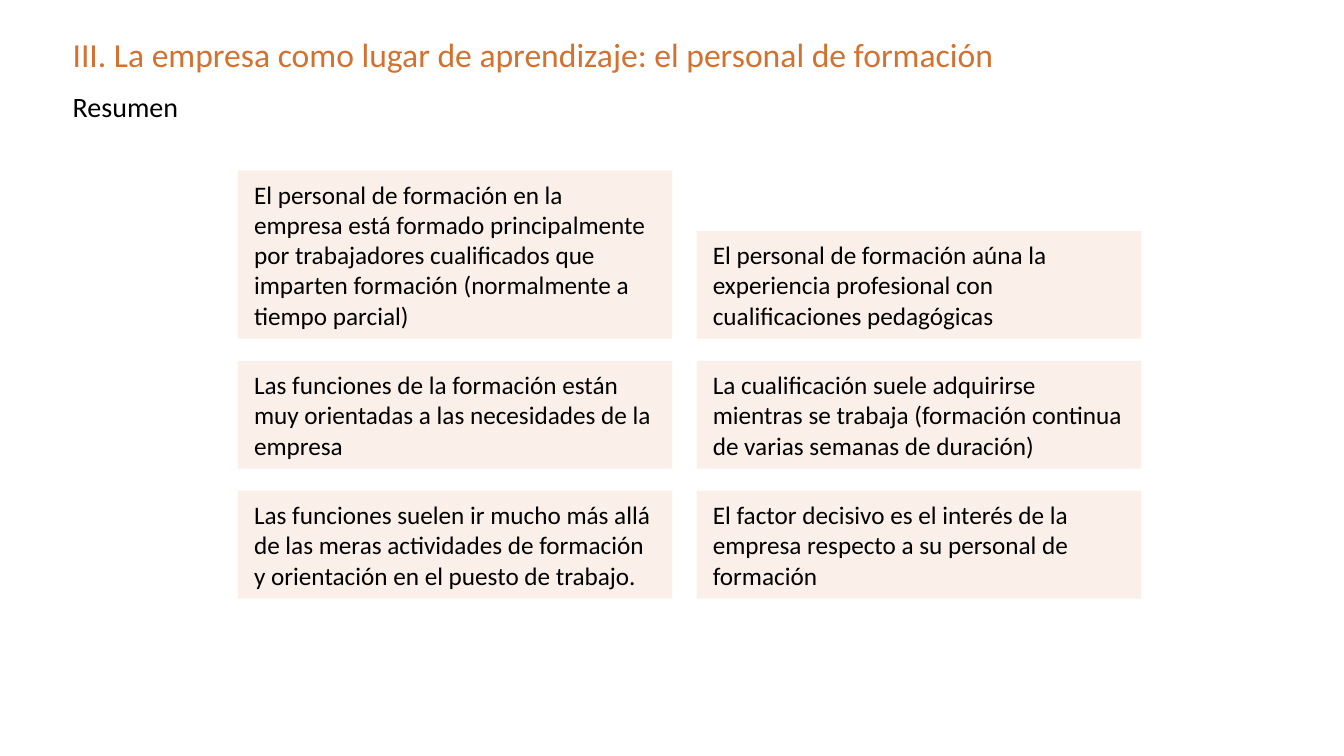
from lxml.etree import SubElement
from pptx import Presentation
from pptx.dml.color import RGBColor
from pptx.enum.shapes import MSO_SHAPE as Shape
from pptx.enum.text import MSO_ANCHOR as Anchor, MSO_AUTO_SIZE as AutoSize, PP_ALIGN as Align
from pptx.oxml.ns import qn
from pptx.util import Inches, Pt


def rgb(value):
    return RGBColor.from_string(value)


class SummarySlide:
    font = "Calibri"
    accent = "D37230"
    ink = "000000"

    def __init__(self, prs):
        self.s = prs.slides.add_slide(prs.slide_layouts[5])

    def set_text(self, sp, text, size, color, anchor, margins=(0, 0), spacing=None):
        tf = sp.text_frame
        tf.word_wrap = True
        tf.auto_size = AutoSize.NONE
        tf.vertical_anchor = anchor
        tf.margin_left = tf.margin_right = Inches(margins[0])
        tf.margin_top = tf.margin_bottom = Inches(margins[1])
        p = tf.paragraphs[0]
        p.alignment = Align.LEFT
        if spacing:
            p.line_spacing = spacing
        r = p.add_run()
        r.text = text
        r.font.name = self.font
        r.font.size = Pt(size)
        r.font.color.rgb = rgb(color)

    def title(self, text, left, top, width, height):
        sp = self.s.shapes.title
        sp.left, sp.top = Inches(left), Inches(top)
        sp.width, sp.height = Inches(width), Inches(height)
        self.set_text(sp, text, 24, self.accent, Anchor.MIDDLE, spacing=0.9)

    def subtitle(self, text, left, top, width, height):
        sp = self.s.shapes.add_textbox(*map(Inches, (left, top, width, height)))
        self.set_text(sp, text, 20, self.ink, Anchor.TOP)

    def card(self, text, left, top, width, height):
        sp = self.s.shapes.add_shape(
            Shape.RECTANGLE, *map(Inches, (left, top, width, height)))
        sp.shadow.inherit = False
        sp.line.fill.background()
        sp.fill.solid()
        sp.fill.fore_color.rgb = rgb(self.accent)
        color = sp._element.spPr.find(qn("a:solidFill"))[0]
        SubElement(color, qn("a:alpha")).set("val", "10000")
        self.set_text(sp, text, 18, self.ink, Anchor.MIDDLE, (0.16, 0.08))


FIRST_BOTTOM = 3.36
ROW_PITCH = 1.29
CARD_HEIGHT = 1.07
TALL_HEIGHT = 1.67

COLUMNS = [
    (2.36, 4.31, [
        ("El personal de formación en la empresa está formado principalmente por "
         "trabajadores cualificados que imparten formación (normalmente a tiempo parcial)",
         TALL_HEIGHT),
        ("Las funciones de la formación están muy orientadas a las necesidades "
         "de la empresa", CARD_HEIGHT),
        ("Las funciones suelen ir mucho más allá de las meras actividades de "
         "formación y orientación en el puesto de trabajo.", CARD_HEIGHT),
    ]),
    (6.91, 4.41, [
        ("El personal de formación aúna la experiencia profesional con "
         "cualificaciones pedagógicas", CARD_HEIGHT),
        ("La cualificación suele adquirirse mientras se trabaja (formación "
         "continua de varias semanas de duración)", CARD_HEIGHT),
        ("El factor decisivo es el interés de la empresa respecto a su personal "
         "de formación", CARD_HEIGHT),
    ]),
]


def main():
    prs = Presentation()
    prs.slide_width, prs.slide_height = Inches(13.33), Inches(7.5)
    slide = SummarySlide(prs)
    slide.title("III. La empresa como lugar de aprendizaje: el personal de formación",
                0.72, 0.32, 9.84, 0.49)
    slide.subtitle("Resumen", 0.72, 0.89, 12.09, 0.49)
    for left, width, cards in COLUMNS:
        for row, (text, height) in enumerate(cards):
            bottom = FIRST_BOTTOM + row * ROW_PITCH
            slide.card(text, left, bottom - height, width, height)
    prs.save("out.pptx")


if __name__ == "__main__":
    main()
